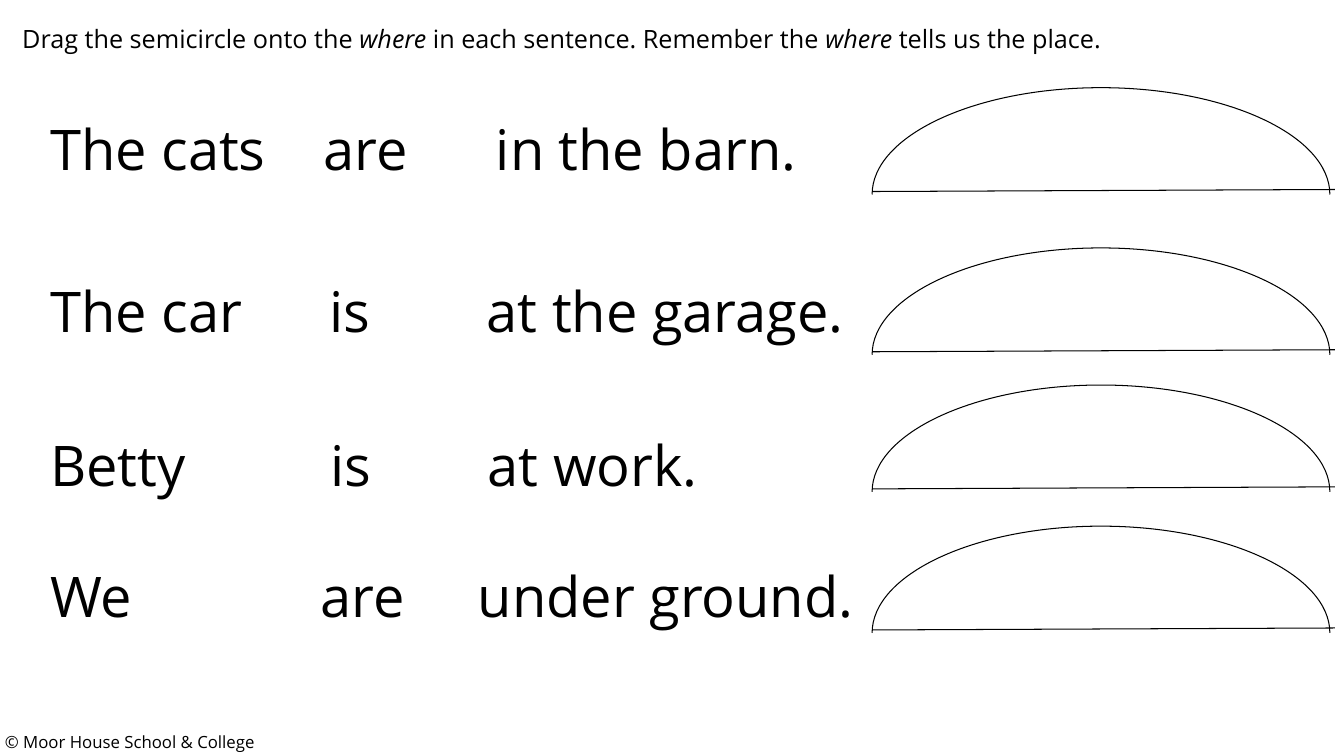
from lxml import etree
from pptx import Presentation
from pptx.dml.color import RGBColor
from pptx.enum.shapes import MSO_CONNECTOR
from pptx.enum.text import MSO_ANCHOR, MSO_AUTO_SIZE, PP_ALIGN
from pptx.oxml.ns import qn
from pptx.util import Inches, Pt

STRAIGHT = MSO_CONNECTOR.STRAIGHT
MIDDLE = MSO_ANCHOR.MIDDLE
GROW = MSO_AUTO_SIZE.SHAPE_TO_FIT_TEXT
LEFT = PP_ALIGN.LEFT

FONT = "Open Sans"
BLACK = "000000"
INSTRUCTION = [
    ("Drag the semicircle onto the ", False),
    ("where", True),
    (" in each sentence. Remember the ", False),
    ("where ", True),
    ("tells us the place.", False),
]
# Top, width, tab-separated sentence parts, tab stops
SENTENCES = [
    (1.08, 9.25, "The cats\tare\tin the barn.", (2.71, 4.42)),
    (2.69, 9.54, "The car\tis\tat the garage.", (2.77, 4.33)),
    (4.22, 9.67, "Betty\tis\tat work.", (2.78, 4.34)),
    (5.52, 9.25, "We\tare\tunder ground.", (2.68, 4.24)),
]
SEMICIRCLE_TOPS = (5.22, 3.82, 2.46, 0.87)
SEMICIRCLE_LEFT = 8.65
RADIUS_X, RADIUS_Y = 2.27, 1.06
# Two quarter curves in radii from the centre of the base:
# start, then control, control and end for each quarter
CURVE = 0.55
ARC_POINTS = [
    (-1, 0), (-1, CURVE), (-CURVE, 1), (0, 1), (CURVE, 1), (1, CURVE), (1, 0),
]


def color(hex_string):
    return RGBColor.from_string(hex_string)


def place(shape, left, top, width, height):
    shape.left, shape.top = Inches(left), Inches(top)
    shape.width, shape.height = Inches(width), Inches(height)


def add_tab_stops(paragraph, positions):
    properties = paragraph._p.get_or_add_pPr()
    tab_list = etree.SubElement(properties, qn("a:tabLst"))
    for position in positions:
        tab = etree.SubElement(tab_list, qn("a:tab"))
        tab.set("pos", str(Inches(position)))
        tab.set("algn", "l")


def write_text(shape, runs, size, tab_stops=()):
    """Fill a shape with one paragraph of (text, italic) runs."""
    frame = shape.text_frame
    frame.word_wrap = True
    frame.auto_size = GROW
    frame.vertical_anchor = MIDDLE
    paragraph = frame.paragraphs[0]
    paragraph.alignment = LEFT
    if tab_stops:
        add_tab_stops(paragraph, tab_stops)
    for text, italic in runs:
        run = paragraph.add_run()
        run.text = text
        run.font.name = FONT
        run.font.size = Pt(size)
        run.font.italic = italic
        run.font.color.rgb = color(BLACK)


def add_text(slide, box, text, **text_format):
    shape = slide.shapes.add_textbox(*map(Inches, box))
    write_text(shape, [(text, False)], **text_format)


def style_line(shape):
    shape.line.color.rgb = color(BLACK)
    shape.line.width = Pt(0.75)


def curve_segments(freeform):
    """Turn every three line segments into one cubic curve."""
    segments = list(freeform._element.iter(qn("a:lnTo")))
    for first in range(0, len(segments), 3):
        curve = etree.Element(qn("a:cubicBezTo"))
        segments[first].addprevious(curve)
        for segment in segments[first:first + 3]:
            curve.append(segment[0])
            segment.getparent().remove(segment)


def add_semicircle(slide, top):
    """Group an open half ellipse with its slightly sloping base line."""
    group = slide.shapes.add_group_shape()
    center_x, base = SEMICIRCLE_LEFT + RADIUS_X, top + RADIUS_Y
    points = [
        (Inches(center_x + RADIUS_X * x), Inches(base - RADIUS_Y * y))
        for x, y in ARC_POINTS
    ]
    builder = group.shapes.build_freeform(*points[0])
    builder.add_line_segments(points[1:], close=False)
    arc = builder.convert_to_shape()
    curve_segments(arc)
    arc.shadow.inherit = False
    arc.fill.background()
    style_line(arc)

    base_line = group.shapes.add_connector(
        STRAIGHT, Inches(SEMICIRCLE_LEFT), Inches(base - 0.03),
        Inches(13.24), Inches(base - 0.05))
    style_line(base_line)
    etree.SubElement(base_line._element.spPr, qn("a:effectLst"))


def main():
    presentation = Presentation()
    presentation.slide_width = Inches(13.33)
    presentation.slide_height = Inches(7.5)
    slide = presentation.slides.add_slide(presentation.slide_layouts[5])

    title = slide.shapes.title
    place(title, 0.12, 0.18, 13.1, 0.4)
    write_text(title, INSTRUCTION, size=18)

    add_text(slide, (-0.05, 7.21, 5.12, 0.3),
             "© Moor House School & College", size=12)
    for top, width, sentence, tab_stops in SENTENCES:
        add_text(slide, (0.4, top, width, 0.77), sentence,
                 size=40, tab_stops=tab_stops)
    for top in SEMICIRCLE_TOPS:
        add_semicircle(slide, top)

    presentation.save("out.pptx")


if __name__ == "__main__":
    main()
